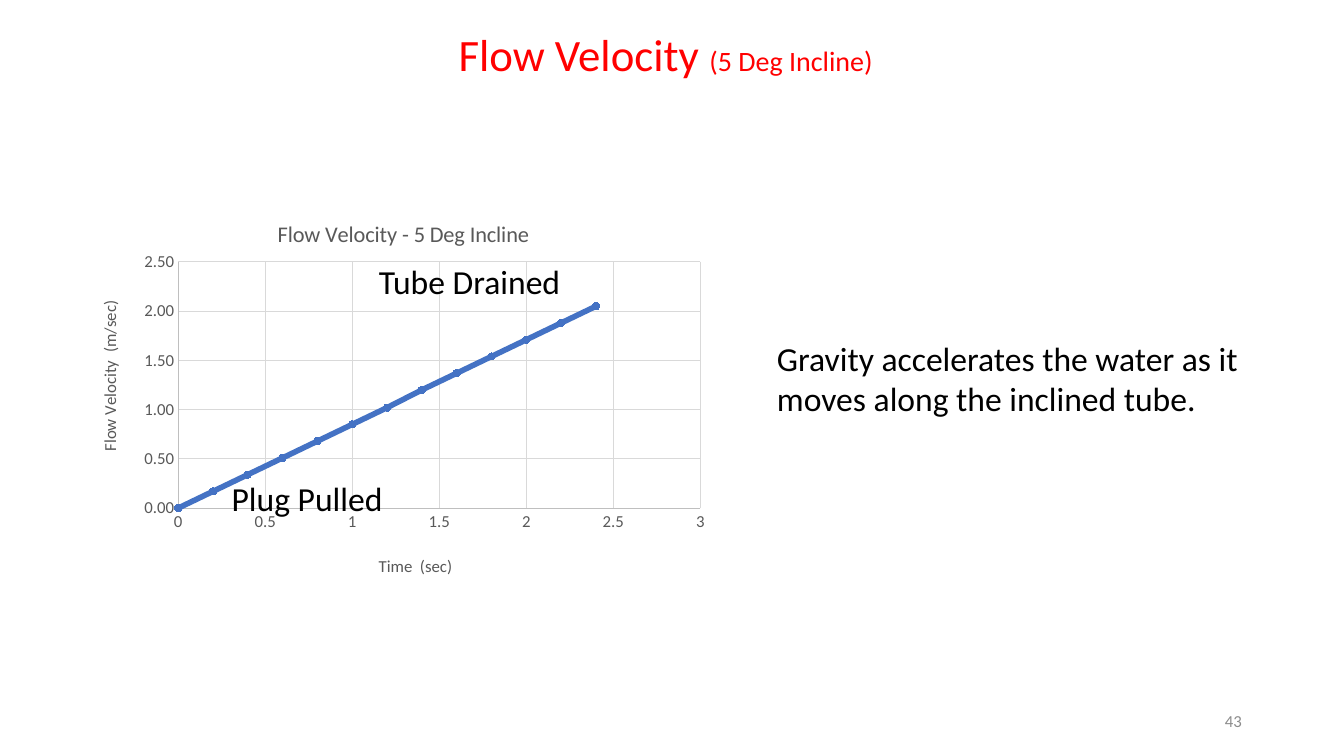
from dataclasses import dataclass

from lxml.etree import SubElement
from pptx import Presentation
from pptx.chart.data import XyChartData
from pptx.dml.color import RGBColor
from pptx.enum.chart import XL_CHART_TYPE as Kind
from pptx.enum.chart import XL_MARKER_STYLE as Mark
from pptx.enum.chart import XL_TICK_MARK as Tick
from pptx.enum.text import MSO_ANCHOR as Anchor
from pptx.enum.text import PP_ALIGN as Align
from pptx.oxml.ns import qn
from pptx.util import Pt

FACE = "Calibri"
BLACK, RED, PALE, GREY = "000000", "FF0000", "8C8C8C", "595959"
BLUE, EDGE, GRID = "4472C4", "BFBFBF", "D9D9D9"
SPEEDS = [0, 0.17, 0.34, 0.51, 0.68, 0.85, 1.02, 1.2, 1.37, 1.54, 1.71, 1.88, 2.05]
STEP = 0.2


@dataclass
class Label:
    box: tuple[float, float, float, float]
    runs: list[tuple[str, float]]
    color: str = BLACK
    align: Align = Align.LEFT
    anchor: Anchor = Anchor.TOP


@dataclass
class Scale:
    title: str
    spot: tuple[float, float]
    top: float
    unit: float
    form: str


LABELS = [
    Label((547.9, 237.6, 344.2, 65.5),
          [("Gravity accelerates the water as it moves along the inclined tube.", 24)]),
    Label((106.5, 15.8, 738, 46), [("Flow Velocity ", 32), ("(5 Deg Incline)", 20)],
          RED, Align.CENTER),
    Label((263.5, 182.9, 151.9, 35.3), [("Tube Drained", 24)]),
    Label((158.4, 337.7, 194.4, 35.3), [("Plug Pulled", 24)]),
    Label((678.2, 500.4, 216, 28.8), [("43", 12)], PALE, Align.RIGHT, Anchor.MIDDLE),
]
TIME = Scale("Time  (sec)", (0.46, 0.91), 3, 0.5, "General")
SPEED = Scale("Flow Velocity  (m/sec)", (0.02, 0.27), 2.5, 0.5, "0.00")


def tint(code: str) -> RGBColor:
    return RGBColor.from_string(code)


def style(font, size: float, color: str) -> None:
    for name, value in {"name": FACE, "size": Pt(size), "bold": False}.items():
        setattr(font, name, value)
    font.color.rgb = tint(color)


def stroke(line, color: str, width: float) -> None:
    line.color.rgb = tint(color)
    line.width = Pt(width)


def place(node, **spots) -> None:
    """Fix the layout of a title or plot area as fractions of the chart."""
    lay = node.find(qn("c:layout"))
    if lay is None:
        lay = SubElement(node, qn("c:layout"))
        text = node.find(qn("c:tx"))
        if text is None:
            node.insert(0, lay)
        else:
            text.addnext(lay)
    for child in list(lay):
        lay.remove(child)
    hand = SubElement(lay, qn("c:manualLayout"))
    for tag, value in spots.items():
        SubElement(hand, qn(f"c:{tag}")).set("val", str(value))


def head(owner, text: str, size: float, spot: tuple[float, float]) -> None:
    """Give a chart or an axis its title."""
    title = owner.chart_title if hasattr(owner, "chart_title") else owner.axis_title
    run = title.text_frame.paragraphs[0].add_run()
    run.text = text
    style(run.font, size, GREY)
    node = title.text_frame.paragraphs[0]._p.getparent().getparent().getparent()
    place(node, xMode="edge", yMode="edge", x=spot[0], y=spot[1])


def write(slide, label: Label) -> None:
    frame = slide.shapes.add_textbox(*map(Pt, label.box)).text_frame
    frame.word_wrap = True
    frame.vertical_anchor = label.anchor
    para = frame.paragraphs[0]
    para.alignment = label.align
    for text, size in label.runs:
        run = para.add_run()
        run.text = text
        style(run.font, size, label.color)


def rule(axis, scale: Scale) -> None:
    """Set the range, grid, labels and title of an axis."""
    looks = {
        "minimum_scale": 0, "maximum_scale": scale.top, "major_unit": scale.unit,
        "has_major_gridlines": True, "major_tick_mark": Tick.NONE,
        "minor_tick_mark": Tick.NONE,
    }
    for name, value in looks.items():
        setattr(axis, name, value)
    stroke(axis.format.line, EDGE, 0.75)
    stroke(axis.major_gridlines.format.line, GRID, 0.75)
    ticks = axis.tick_labels
    ticks.number_format = scale.form
    ticks.number_format_is_linked = False
    style(ticks.font, 12, GREY)
    head(axis, scale.title, 12, scale.spot)


def plot(slide) -> None:
    data = XyChartData()
    flow = data.add_series("Series 1")
    for i, speed in enumerate(SPEEDS):
        flow.add_data_point(round(i * STEP, 1), speed)
    box = map(Pt, (59, 136.1, 455, 283.7))
    chart = slide.shapes.add_chart(Kind.XY_SCATTER_LINES, *box, data).chart
    style(chart.font, 10, BLACK)
    chart.has_legend = False
    head(chart, "Flow Velocity - 5 Deg Incline", 16, (0.3, 0.06))
    rule(chart.category_axis, TIME)
    rule(chart.value_axis, SPEED)
    chart.plots[0].vary_by_categories = False
    line = chart.plots[0].series[0]
    line.smooth = False
    stroke(line.format.line, BLUE, 4)
    line.marker.style = Mark.CIRCLE
    line.marker.size = 5
    line.marker.format.fill.solid()
    line.marker.format.fill.fore_color.rgb = tint(BLUE)
    stroke(line.marker.format.line, BLUE, 0.75)
    area = chart.element.find(f".//{qn('c:plotArea')}") if hasattr(chart, "element") \
        else chart._chartSpace.find(f".//{qn('c:plotArea')}")
    place(area, layoutTarget="inner", xMode="edge", yMode="edge",
          x=0.15, y=0.18, w=0.82, h=0.62)


def main() -> None:
    deck = Presentation()
    deck.slide_width, deck.slide_height = Pt(960), Pt(540)
    slide = deck.slides.add_slide(deck.slide_layouts[6])
    plot(slide)
    for label in LABELS:
        write(slide, label)
    deck.save("out.pptx")


if __name__ == "__main__":
    main()
